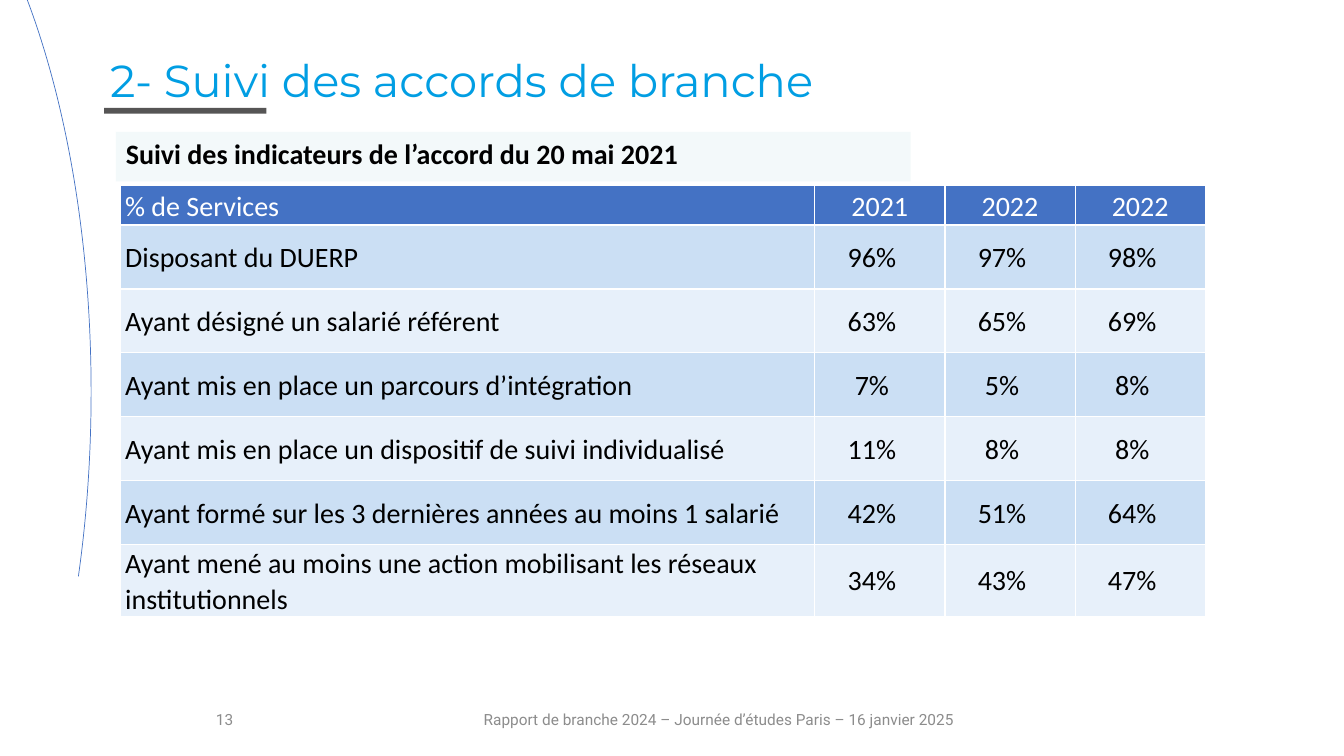
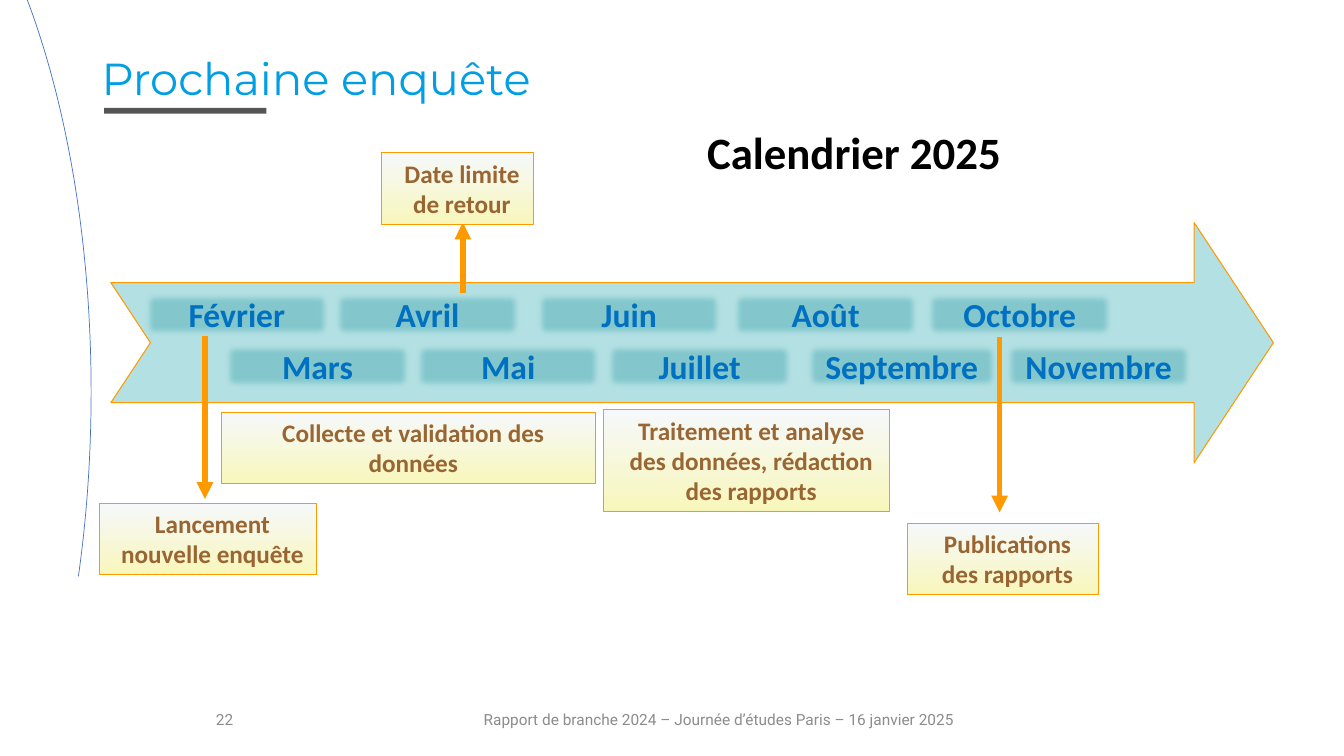
"""Build two slides: a table of indicators and a survey calendar."""
from dataclasses import dataclass
from typing import NamedTuple

from lxml import etree
from pptx import Presentation
from pptx import util as u
from pptx.dml.color import RGBColor
from pptx.enum import shapes, text
from pptx.oxml import ns

COLS, ROWS = 160, 90
WIDE, HIGH = u.Inches(13.333), u.Inches(7.5)
FORM = shapes.MSO_SHAPE
ALIGN = text.PP_ALIGN
ANCHOR = text.MSO_ANCHOR


@dataclass(frozen=True)
class Theme:
    """Colours, fonts and type sizes."""
    blue: str = "019EE3"
    rule: str = "565555"
    arc: str = "4472C4"
    grey: str = "8C8C8C"
    pale: str = "F3F9FA"
    bands: tuple = ("E7F0FA", "CBDFF4")
    white: str = "FFFFFF"
    black: str = "000000"
    teal: str = "B3E0E3"
    month: str = "72BFC5"
    ink: str = "0070C0"
    gold: str = "FF9900"
    brown: str = "996633"
    fade: tuple = ("F6F8FC", "F8F7BB")
    head: str = "Montserrat"
    body: str = "Calibri"
    foot: str = "Roboto"
    big: int = 32
    mid: int = 24
    base: int = 20
    note: int = 18
    tiny: int = 11


T = Theme()


class Box(NamedTuple):
    """Place and size in grid columns and rows."""
    x: float
    y: float
    w: float
    h: float


class Note(NamedTuple):
    """Caption of a calendar step."""
    words: str
    box: Box


class Month(NamedTuple):
    """Month label with its left column and width."""
    name: str
    x: float
    w: float = 22.8


class Arrow(NamedTuple):
    """Vertical arrow in one column."""
    x: float
    start: float
    end: float


FOOT = "Rapport de branche 2024 – Journée d’études Paris – 16 janvier 2025"
HEADS = ("% de Services", "2021", "2022", "2022")
DATA = (
    ("Disposant du DUERP", 96, 97, 98),
    ("Ayant désigné un salarié référent", 63, 65, 69),
    ("Ayant mis en place un parcours d’intégration", 7, 5, 8),
    ("Ayant mis en place un dispositif de suivi individualisé", 11, 8, 8),
    ("Ayant formé sur les 3 dernières années au moins 1 salarié", 42, 51, 64),
    ("Ayant mené au moins une action mobilisant les réseaux institutionnels", 34, 43, 47),
)
MONTHS = (
    Month("Février", 16.8), Month("Mars", 26.4), Month("Avril", 39.5),
    Month("Mai", 49.1), Month("Juin", 63.5), Month("Juillet", 71.9),
    Month("Août", 86.9), Month("Septembre", 95.6, 23.5),
    Month("Octobre", 110), Month("Novembre", 119.4),
)
ARROWS = (Arrow(24.4, 40, 59.4), Arrow(119, 40.1, 61), Arrow(55.1, 34.9, 26.5))
NOTES = (
    Note("Date limite de retour", Box(45.4, 18.2, 18.1, 8.5)),
    Note("Collecte et validation des données", Box(26.4, 49.1, 44.5, 8.5)),
    Note("Traitement et analyse des données, rédaction des rapports", Box(71.9, 48.8, 34, 12.1)),
    Note("Lancement nouvelle enquête", Box(11.8, 59.9, 25.9, 8.5)),
    Note("Publications des rapports", Box(108, 62.3, 22.8, 8.5)),
)


def col(n: float) -> int:
    """Turn columns into a length."""
    return round(WIDE * n / COLS)


def row(n: float) -> int:
    """Turn rows into a length."""
    return round(HIGH * n / ROWS)


def place(box: Box) -> tuple:
    """Turn a grid box into left, top, width and height."""
    return col(box.x), row(box.y), col(box.w), row(box.h)


def rgb(code: str) -> RGBColor:
    """Read a colour code."""
    return RGBColor.from_string(code)


def node(up, tag: str, **attrs: str):
    """Add a drawing element under another."""
    return etree.SubElement(up, ns.qn(tag), attrs)


def write(frame, words: str, *, size: int = T.base, font: str = T.body,
          color: str = T.black, bold: bool = False, align=ALIGN.LEFT,
          lines: float = 1.0, before: float = 0, after: float = 0) -> None:
    """Set one formatted paragraph in a text frame."""
    para = frame.paragraphs[0]
    para.alignment, para.line_spacing = align, lines
    para.space_before, para.space_after = u.Pt(before), u.Pt(after)
    run = para.add_run()
    run.text = words
    run.font.name, run.font.size, run.font.bold = font, u.Pt(size), bold
    run.font.color.rgb = rgb(color)


def shape(slide, kind, box: Box, fill: str = "", line: str = "", width: float = 0.75):
    """Draw a preset shape without shadow."""
    item = slide.shapes.add_shape(kind, *place(box))
    item.shadow.inherit = False
    if fill:
        item.fill.solid()
        item.fill.fore_color.rgb = rgb(fill)
    else:
        item.fill.background()
    if line:
        item.line.color.rgb = rgb(line)
        item.line.width = u.Pt(width)
    else:
        item.line.fill.background()
    item.text_frame.word_wrap = True
    item.text_frame.vertical_anchor = ANCHOR.TOP
    return item


def label(slide, box: Box, words: str, anchor=ANCHOR.TOP, **style) -> None:
    """Add a wrapped text box."""
    frame = slide.shapes.add_textbox(*place(box)).text_frame
    frame.word_wrap = True
    frame.vertical_anchor = anchor
    write(frame, words, **style)


def base(deck, title: str, box: Box, page: int):
    """Add a slide with its title, rule, arc and footer."""
    slide = deck.slides.add_slide(deck.slide_layouts[5])
    shape(slide, FORM.RECTANGLE, Box(12.4, 12.85, 19.3, 0.7), T.rule)
    arc = shape(slide, FORM.ARC, Box(-53, -25.4, 63.85, 144.1), line=T.arc, width=0.5)
    arc.adjustments[0], arc.adjustments[1] = 107, 21.51
    for words, x, w in ((str(page), 8.75, 36), (FOOT, 51.7, 67.8)):
        label(slide, Box(x, 83.3, w, 4.8), words, ANCHOR.MIDDLE, size=T.tiny,
              font=T.foot, color=T.grey, align=ALIGN.CENTER)
    head = slide.shapes.title
    head.left, head.top, head.width, head.height = place(box)
    frame = head.text_frame
    frame.auto_size = text.MSO_AUTO_SIZE.NONE
    frame.vertical_anchor = ANCHOR.TOP
    write(frame, title, size=T.big, font=T.head, color=T.blue, lines=0.9, before=10)
    return slide


def fill(cell, words: str, color: str, ink: str, num: bool, inset: float) -> None:
    """Fill and format one table cell."""
    cell.margin_left, cell.margin_right = col(0.6), col(inset)
    cell.margin_top = cell.margin_bottom = 0
    cell.vertical_anchor = ANCHOR.MIDDLE
    cell.fill.solid()
    cell.fill.fore_color.rgb = rgb(color)
    props = cell._tc.get_or_add_tcPr()
    for i, side in enumerate("LRTB"):
        edge = node(props, f"a:ln{side}", w=str(u.Pt(1)))
        node(node(edge, "a:solidFill"), "a:srgbClr", val=T.white)
        props.insert(i, edge)
    write(cell.text_frame, words, color=ink, lines=1.07, before=2, after=2,
          align=ALIGN.CENTER if num else ALIGN.LEFT)


def grid(slide) -> None:
    """Draw the table of indicators."""
    wide, tall = (82.7, 15.5, 15.5, 15.5), (4.7,) + (7.6,) * len(DATA)
    box = Box(14.3, 22.1, sum(wide), sum(tall))
    table = slide.shapes.add_table(len(tall), len(wide), *place(box)).table
    for c, w in enumerate(wide):
        table.columns[c].width = col(w)
    for r, h in enumerate(tall):
        table.rows[r].height = row(h)
    for c, words in enumerate(HEADS):
        fill(table.cell(0, c), words, T.arc, T.white, c > 0, 0.6)
    for r, (name, *vals) in enumerate(DATA, 1):
        for c, words in enumerate([name] + [f"{v}%" for v in vals]):
            fill(table.cell(r, c), words, T.bands[r % 2], T.black, c > 0,
                 2.5 if c else 0.6)


def month(slide, i: int, item: Month) -> None:
    """Draw a soft-edged month, alternating between two rows."""
    tag = shape(slide, FORM.RECTANGLE, Box(item.x, 34.45 + 6.15 * (i % 2), item.w, 6), T.month)
    props = tag.element.spPr
    node(props.find(".//" + ns.qn("a:srgbClr")), "a:alpha", val="73000")
    node(props.find(ns.qn("a:effectLst")), "a:softEdge", rad=str(u.Pt(5)))
    write(tag.text_frame, item.name, size=T.mid, color=T.ink, bold=True, align=ALIGN.CENTER)


def arrow(slide, item: Arrow) -> None:
    """Draw a vertical arrow."""
    x = col(item.x)
    link = slide.shapes.add_connector(shapes.MSO_CONNECTOR.STRAIGHT, x, row(item.start),
                                      x, row(item.end))
    link.line.color.rgb = rgb(T.gold)
    link.line.width = u.Pt(4)
    props = link.element.spPr
    node(props.find(ns.qn("a:ln")), "a:tailEnd", type="triangle")
    node(props, "a:effectLst")


def note(slide, item: Note) -> None:
    """Draw a caption on a gradient."""
    card = shape(slide, FORM.RECTANGLE, item.box, line=T.gold)
    card.fill.gradient()
    card.fill.gradient_angle = 270
    for i, stop in enumerate(card.fill.gradient_stops):
        stop.color.rgb = rgb(T.fade[i])
        stop.position = i
    card.text_frame.margin_left = col(2.28)
    write(card.text_frame, item.words, size=T.note, color=T.brown, bold=True,
          align=ALIGN.CENTER)


def main() -> None:
    """Build and save the deck."""
    deck = Presentation()
    deck.slide_width, deck.slide_height = WIDE, HIGH

    slide = base(deck, "2- Suivi des accords de branche", Box(11.9, 6.35, 144.6, 7.2), 13)
    band = shape(slide, FORM.RECTANGLE, Box(13.8, 15.7, 94.6, 5.9), T.pale)
    write(band.text_frame, "Suivi des indicateurs de l’accord du 20 mai 2021", bold=True)
    grid(slide)

    slide = base(deck, "Prochaine enquête", Box(10.9, 6.1, 106.3, 7.2), 22)
    line = shape(slide, FORM.NOTCHED_RIGHT_ARROW, Box(13.2, 26.5, 138.4, 28.6), T.teal, T.gold)
    line.adjustments[0], line.adjustments[1] = 0.5, 0.33
    for i, item in enumerate(MONTHS):
        month(slide, i, item)
    for item in ARROWS:
        arrow(slide, item)
    for item in NOTES:
        note(slide, item)
    label(slide, Box(83, 14.3, 45.7, 7.7), "Calendrier 2025", size=T.big, bold=True)
    deck.save("out.pptx")


if __name__ == "__main__":
    main()
